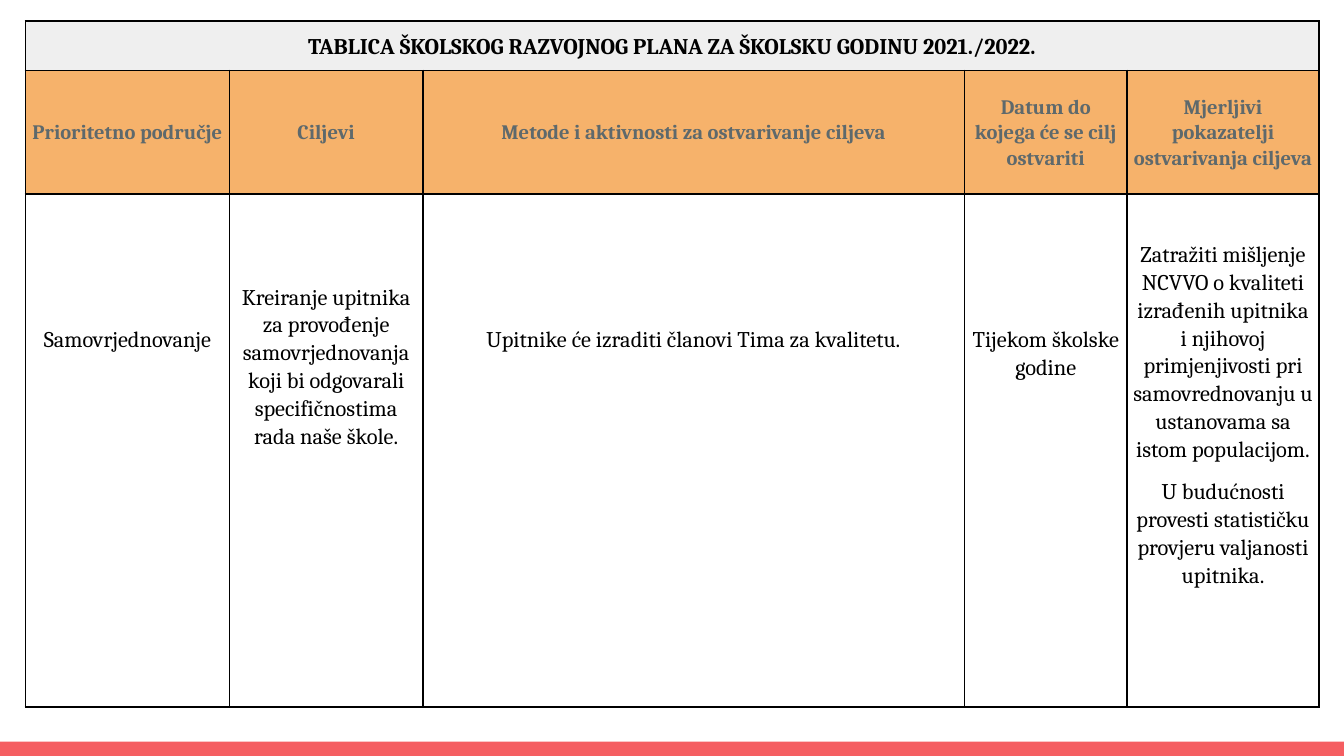
from lxml import etree
from pptx import Presentation
from pptx import util as u
from pptx.dml.color import RGBColor
from pptx.enum import shapes, text
from pptx.oxml.ns import qn


def paint(fill, colour):
    fill.solid()
    fill.fore_color.rgb = RGBColor.from_string(colour)


def fill_cell(cell, paragraphs, look):
    # Borders go before the fill in the cell properties
    properties = cell._tc.get_or_add_tcPr()
    for side in ("lnL", "lnR", "lnT", "lnB"):
        line = etree.SubElement(properties, qn("a:" + side), w=str(u.Pt(1)))
        solid = etree.SubElement(line, qn("a:solidFill"))
        etree.SubElement(solid, qn("a:srgbClr"), val="000000")
    paint(cell.fill, look["fill"])
    margins = {"margin_left": 0.1, "margin_right": 0.1,
               "margin_top": look["top"], "margin_bottom": 0.08}
    for name, value in margins.items():
        setattr(cell, name, u.Cm(value))
    cell.vertical_anchor = look["anchor"]

    frame = cell.text_frame
    for index, words in enumerate(paragraphs):
        para = frame.paragraphs[0] if index == 0 else frame.add_paragraph()
        spacing = {"alignment": text.PP_ALIGN.CENTER, "line_spacing": 1.08,
                   "space_before": u.Pt(8 if index else 0),
                   "space_after": u.Pt(0 if index < len(paragraphs) - 1 else 8)}
        for name, value in spacing.items():
            setattr(para, name, value)
        span = para.add_run()
        span.text = words
        font = {"name": "Cambria", "size": u.Pt(look["size"]), "bold": look["bold"]}
        for name, value in font.items():
            setattr(span.font, name, value)
        paint(span.font.fill, look["colour"])


deck = Presentation()
deck.slide_width, deck.slide_height = u.Cm(25.4), u.Cm(14.29)
page = deck.slides.add_slide(deck.slide_layouts[6])

# Bottom band
band = page.shapes.add_shape(shapes.MSO_SHAPE.RECTANGLE,
                             u.Cm(0), u.Cm(14.02), u.Cm(25.4), u.Cm(0.27))
band.shadow.inherit = False
paint(band.fill, "F55E61")
band.line.fill.background()

# Table grid
widths = [3.86, 3.65, 10.24, 3.07, 3.63]
heights = [0.93, 2.34, 9.69]
plan = page.shapes.add_table(len(heights), len(widths), u.Cm(0.48), u.Cm(0.4),
                             u.Cm(sum(widths)), u.Cm(sum(heights))).table
plan.first_row = plan.horz_banding = False
for column, width in zip(plan.columns, widths):
    column.width = u.Cm(width)
for row, height in zip(plan.rows, heights):
    row.height = u.Cm(height)

# Title row across all columns
title_look = {"fill": "EFEFEF", "colour": "000000", "size": 12, "bold": True,
              "anchor": text.MSO_ANCHOR.MIDDLE, "top": 0.08}
plan.cell(0, 0).merge(plan.cell(0, len(widths) - 1))
title = "TABLICA ŠKOLSKOG RAZVOJNOG PLANA ZA ŠKOLSKU GODINU 2021./2022."
for column in range(len(widths)):
    fill_cell(plan.cell(0, column), [] if column else [title], title_look)

# Column headings
heading_look = {**title_look, "fill": "F6B26B", "colour": "5E696C", "size": 11}
headings = [
    "Prioritetno područje",
    "Ciljevi",
    "Metode i aktivnosti za ostvarivanje ciljeva",
    "Datum do kojega će se cilj ostvariti",
    "Mjerljivi pokazatelji ostvarivanja ciljeva",
]
for column, heading in enumerate(headings):
    fill_cell(plan.cell(1, column), [heading], heading_look)

# Plan details: lines to drop from the top of the cell, then paragraphs
details = [
    (3, ["Samovrjednovanje"]),
    (2, ["Kreiranje upitnika za provođenje samovrjednovanja koji bi odgovarali "
         "specifičnostima rada naše škole."]),
    (3, ["Upitnike će izraditi članovi Tima za kvalitetu."]),
    (3, ["Tijekom školske godine"]),
    (1, ["Zatražiti mišljenje NCVVO o kvaliteti izrađenih upitnika i njihovoj "
         "primjenjivosti pri samovrednovanju u ustanovama sa istom populacijom.",
         "U budućnosti provesti statističku provjeru valjanosti upitnika."]),
]
line_step = 0.8
for column, (drop, paragraphs) in enumerate(details):
    detail_look = {**title_look, "fill": "FFFFFF", "bold": False,
                   "anchor": text.MSO_ANCHOR.TOP, "top": 0.08 + drop * line_step}
    fill_cell(plan.cell(2, column), paragraphs, detail_look)

deck.save("out.pptx")
